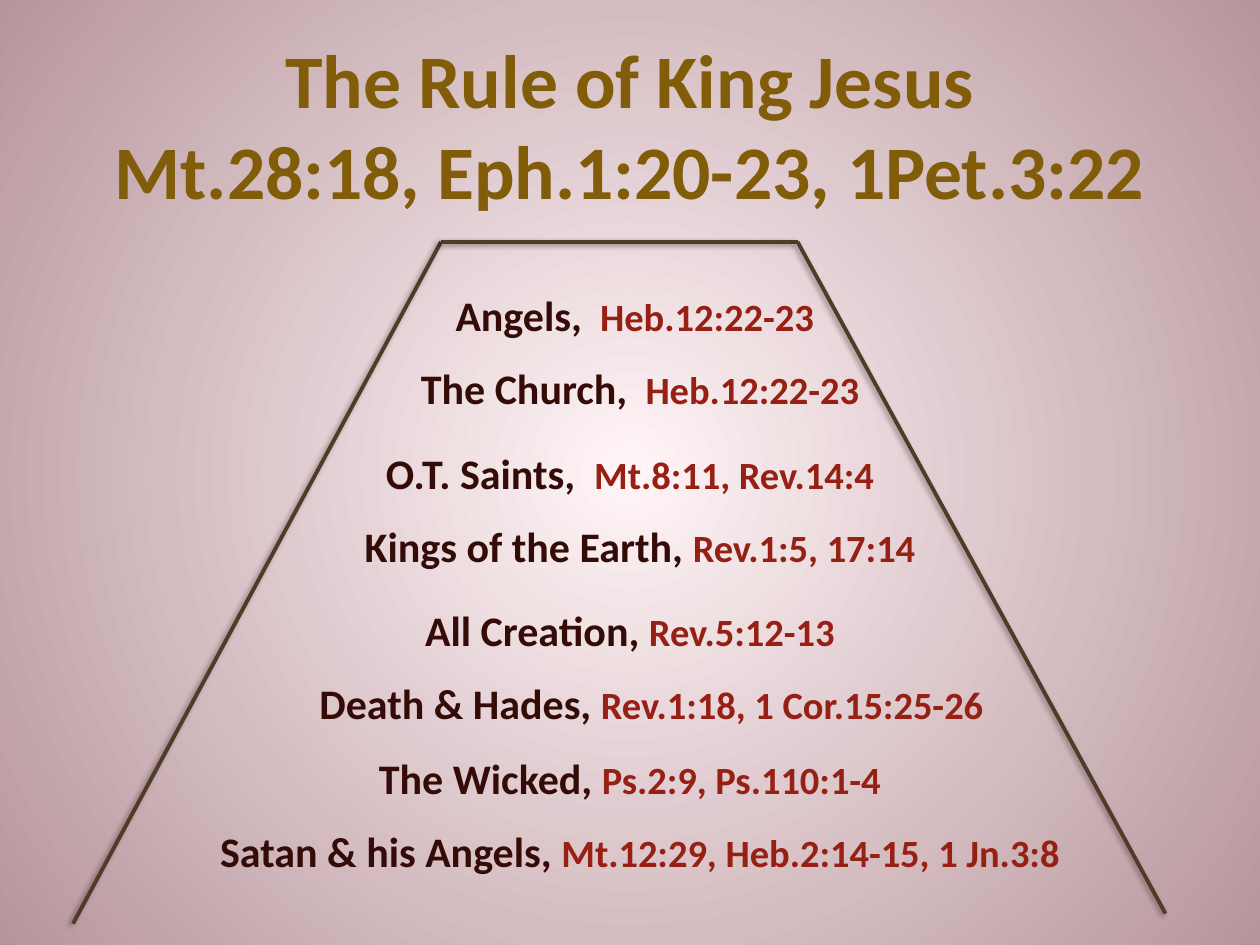
"""Builds a slide on the rule of King Jesus, with a trapezoid of realms."""
from pptx import Presentation
from pptx import oxml
from pptx import util as u
from pptx.dml.color import RGBColor
from pptx.enum import shapes, text
from pptx.oxml.ns import nsdecls


def color(value):
    return RGBColor.from_string(value)


def add_run(paragraph, words, size, value):
    run = paragraph.add_run()
    run.text = words
    run.font.name = "Calibri"
    run.font.size = u.Pt(size)
    run.font.bold = True
    run.font.color.rgb = color(value)


presentation = Presentation()
presentation.slide_width = u.Inches(10)
presentation.slide_height = u.Inches(7.5)
slide = presentation.slides.add_slide(presentation.slide_layouts[6])

fill = slide.background.fill
fill.gradient()
for stop, position, value in zip(fill.gradient_stops, (0, 1), ("FFF4F6", "B6969C")):
    stop.position = position
    stop.color.rgb = color(value)
gradient = slide.element.xpath("./p:cSld/p:bg/p:bgPr/a:gradFill")[0]
for linear in gradient.xpath("./a:lin"):
    gradient.remove(linear)
gradient.append(oxml.parse_xml(
    f'<a:path {nsdecls("a")} path="circle">'
    '<a:fillToRect l="50000" t="50000" r="50000" b="50000"/></a:path>'))

title = slide.shapes.add_textbox(u.Inches(0.5), u.Inches(0.25), u.Inches(9), u.Inches(1.5))
title.text_frame.word_wrap = True
title.text_frame.vertical_anchor = text.MSO_ANCHOR.BOTTOM
paragraph = title.text_frame.paragraphs[0]
paragraph.alignment = text.PP_ALIGN.CENTER
add_run(paragraph, "The Rule of King Jesus", 43.2, "815C09")
paragraph.add_line_break()
add_run(paragraph, "Mt.28:18, Eph.1:20-23, 1Pet.3:22", 43.2, "815C09")

corners = [(0.58, 7.33), (3.5, 1.92), (6.33, 1.92), (9.25, 7.25)]
for start, end in zip(corners, corners[1:]):
    side = slide.shapes.add_connector(
        shapes.MSO_CONNECTOR.STRAIGHT, *(u.Inches(value) for value in start + end))
    side.line.color.rgb = color("4E3B28")
    side.line.width = u.Pt(2.21)
    side.element.spPr.append(oxml.parse_xml(
        f'<a:effectLst {nsdecls("a")}>'
        '<a:outerShdw blurRad="39370" dist="25400" dir="9000000" rotWithShape="0">'
        '<a:srgbClr val="1A0000"><a:alpha val="40000"/></a:srgbClr>'
        '</a:outerShdw></a:effectLst>'))

realms = [
    (1.25, 2.25, " Angels, ", " Heb.12:22-23"),
    (1.33, 2.83, "The Church, ", " Heb.12:22-23"),
    (1.25, 3.5, "O.T. Saints,  ", "Mt.8:11, Rev.14:4"),
    (1.33, 4.08, "Kings of the Earth, ", "Rev.1:5, 17:14"),
    (1.25, 4.75, "All Creation, ", "Rev.5:12-13"),
    (1.42, 5.33, "Death & Hades, ", "Rev.1:18, 1 Cor.15:25-26"),
    (1.25, 5.92, "The Wicked, ", "Ps.2:9, Ps.110:1-4"),
    (1.33, 6.5, "Satan & his Angels, ", "Mt.12:29, Heb.2:14-15, 1 Jn.3:8"),
]
for left, top, realm, verses in realms:
    label = slide.shapes.add_textbox(u.Inches(left), u.Inches(top), u.Inches(7.5), u.Inches(0.5))
    label.text_frame.word_wrap = True
    label.text_frame.auto_size = text.MSO_AUTO_SIZE.SHAPE_TO_FIT_TEXT
    paragraph = label.text_frame.paragraphs[0]
    paragraph.alignment = text.PP_ALIGN.CENTER
    add_run(paragraph, realm, 24, "340B07")
    add_run(paragraph, verses, 22, "972014")

presentation.save("out.pptx")
